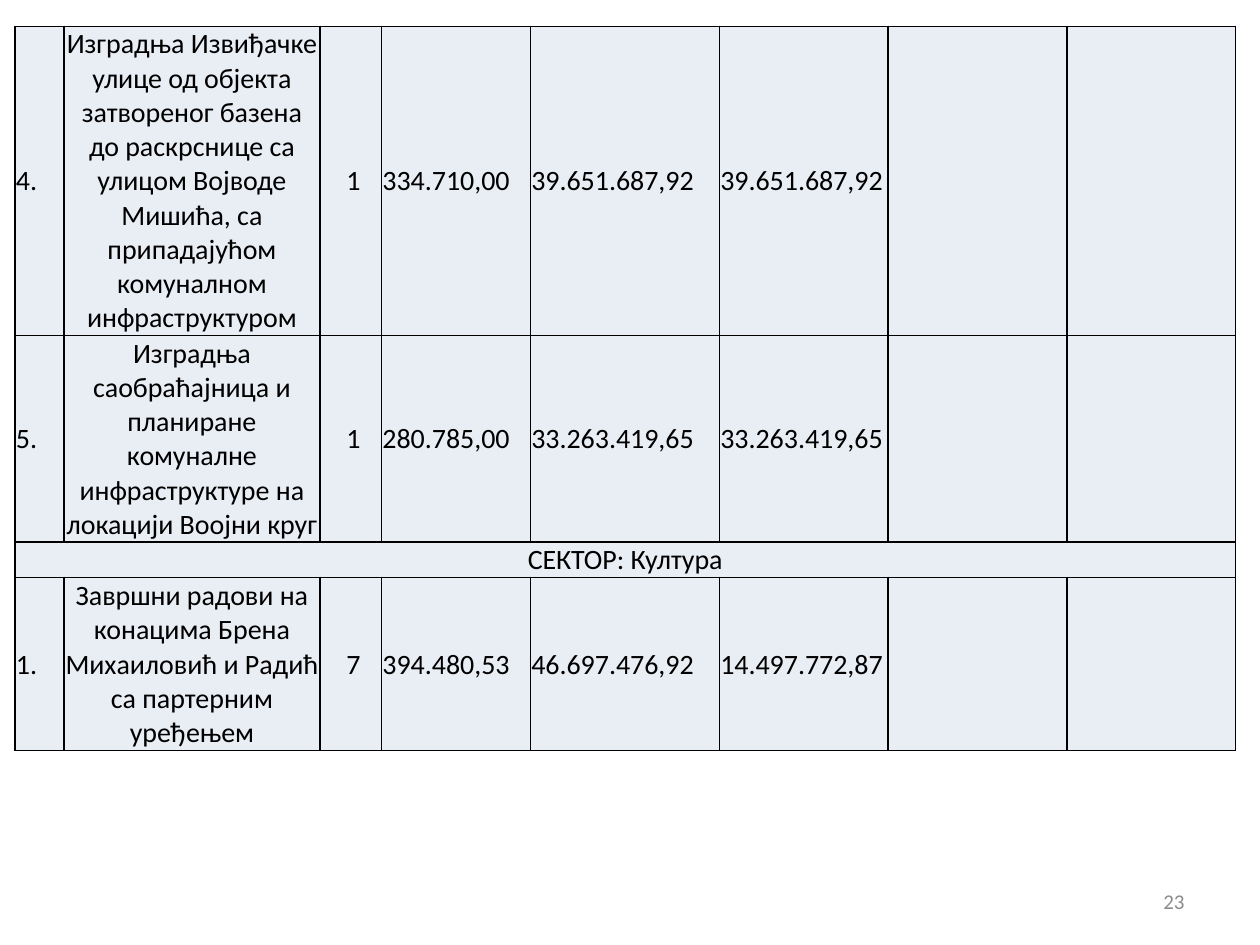
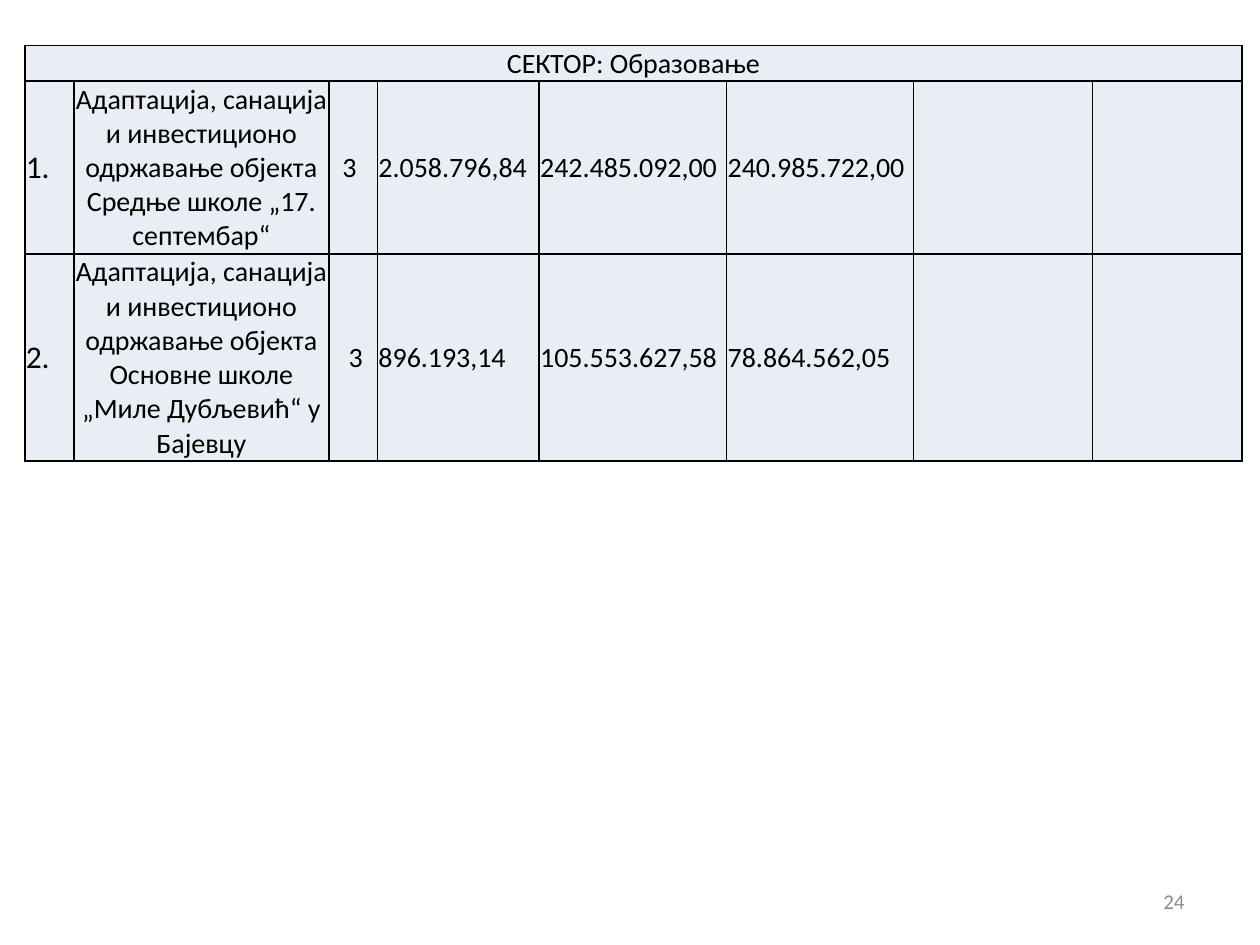
from lxml import etree
from pptx import Presentation
from pptx import util as u
from pptx.dml.color import RGBColor
from pptx.enum import text
from pptx.oxml import ns

BLACK = RGBColor(0x00, 0x00, 0x00)
CELL_FILL = RGBColor(0xE9, 0xED, 0xF4)
NUMBER_GREY = RGBColor(0x8C, 0x8C, 0x8C)
FONT = "Calibri"
BODY_SIZE = 16
CELL_MARGIN = 0.02
COUNT_COLUMN = 2
ALIGN = text.PP_ALIGN

tables = [
    {
        "number": "23", "left": 0.3, "top": 0.53,
        "ordinal_size": 16, "ordinal_align": ALIGN.JUSTIFY,
        "widths": [0.99, 5.16, 1.24, 3.0, 3.81, 3.4, 3.61, 3.4],
        "heights": [6.23, 4.17, 0.71, 3.49],
        "count_indents": [0.51, 0.51, 0, 0.51],
        "rows": [
            ["4.", "Изградња Извиђачке улице од објекта затвореног базена "
             "до раскрснице са улицом Војводе Мишића, са припадајућом "
             "комуналном инфраструктуром",
             "1", "334.710,00", "39.651.687,92", "39.651.687,92", "", ""],
            ["5.", "Изградња саобраћајница и планиране комуналне "
             "инфраструктуре на локацији Воојни круг",
             "1", "280.785,00", "33.263.419,65", "33.263.419,65", "", ""],
            ["СЕКТОР: Култура"],
            ["1.", "Завршни радови на конацима Брена Михаиловић и Радић "
             "са партерним уређењем",
             "7", "394.480,53", "46.697.476,92", "14.497.772,87", "", ""],
        ],
    },
    {
        "number": "24", "left": 0.5, "top": 0.92,
        "ordinal_size": 18, "ordinal_align": ALIGN.LEFT,
        "widths": [0.99, 5.14, 0.98, 3.26, 3.78, 3.76, 3.61, 3.02],
        "heights": [0.71, 3.49, 4.17],
        "count_indents": [0, 0.25, 0.38],
        "rows": [
            ["СЕКТОР: Образовање"],
            ["1.", "Адаптација, санација и инвестиционо одржавање објекта "
             "Средње школе „17. септембар“",
             "3", "2.058.796,84", "242.485.092,00", "240.985.722,00", "", ""],
            ["2.", "Адаптација, санација и инвестиционо одржавање објекта "
             "Основне школе „Миле Дубљевић“ у Бајевцу",
             "3", "896.193,14", "105.553.627,58", "78.864.562,05", "", ""],
        ],
    },
]


def write(para, words, size, color, align):
    para.text = words
    para.alignment = align
    for span in para.runs:
        span.font.name = FONT
        span.font.size = u.Pt(size)
        span.font.color.rgb = color


def style_cell(cell):
    properties = cell._tc.get_or_add_tcPr()
    for side in ("lnL", "lnR", "lnT", "lnB"):
        line = etree.SubElement(properties, ns.qn("a:" + side), w=str(u.Pt(1)))
        solid = etree.SubElement(line, ns.qn("a:solidFill"))
        etree.SubElement(solid, ns.qn("a:srgbClr"), val=str(BLACK))
    cell.fill.solid()
    cell.fill.fore_color.rgb = CELL_FILL
    cell.vertical_anchor = text.MSO_ANCHOR.MIDDLE
    cell.margin_left = cell.margin_right = cell.margin_top = u.Cm(CELL_MARGIN)
    cell.margin_bottom = 0


deck = Presentation()
deck.slide_width = u.Cm(25.4)
deck.slide_height = u.Cm(19.05)

for data in tables:
    page = deck.slides.add_slide(deck.slide_layouts[6])

    box = page.shapes.add_textbox(u.Cm(18.2), u.Cm(17.66), u.Cm(5.93), u.Cm(1.01))
    box.text_frame.word_wrap = True
    box.text_frame.vertical_anchor = text.MSO_ANCHOR.MIDDLE
    write(box.text_frame.paragraphs[0], data["number"], 12, NUMBER_GREY, ALIGN.RIGHT)

    widths, heights = data["widths"], data["heights"]
    frame = page.shapes.add_table(
        len(heights), len(widths), u.Cm(data["left"]), u.Cm(data["top"]),
        u.Cm(sum(widths)), u.Cm(sum(heights)))
    table = frame.table
    table.first_row = False
    table.horz_banding = False
    for column, width in zip(table.columns, widths):
        column.width = u.Cm(width)
    for row, height in zip(table.rows, heights):
        row.height = u.Cm(height)
    for cell in table.iter_cells():
        style_cell(cell)

    for row_index, entries in enumerate(data["rows"]):
        is_sector = len(entries) == 1
        if is_sector:
            table.cell(row_index, 0).merge(table.cell(row_index, len(widths) - 1))
        else:
            indent = CELL_MARGIN + data["count_indents"][row_index]
            table.cell(row_index, COUNT_COLUMN).margin_left = u.Cm(indent)
        for column_index, words in enumerate(entries):
            size, align = BODY_SIZE, ALIGN.JUSTIFY
            if is_sector or column_index == 1:
                align = ALIGN.CENTER
            elif column_index == 0:
                size, align = data["ordinal_size"], data["ordinal_align"]
            para = table.cell(row_index, column_index).text_frame.paragraphs[0]
            write(para, words, size, BLACK, align)

deck.save("out.pptx")
